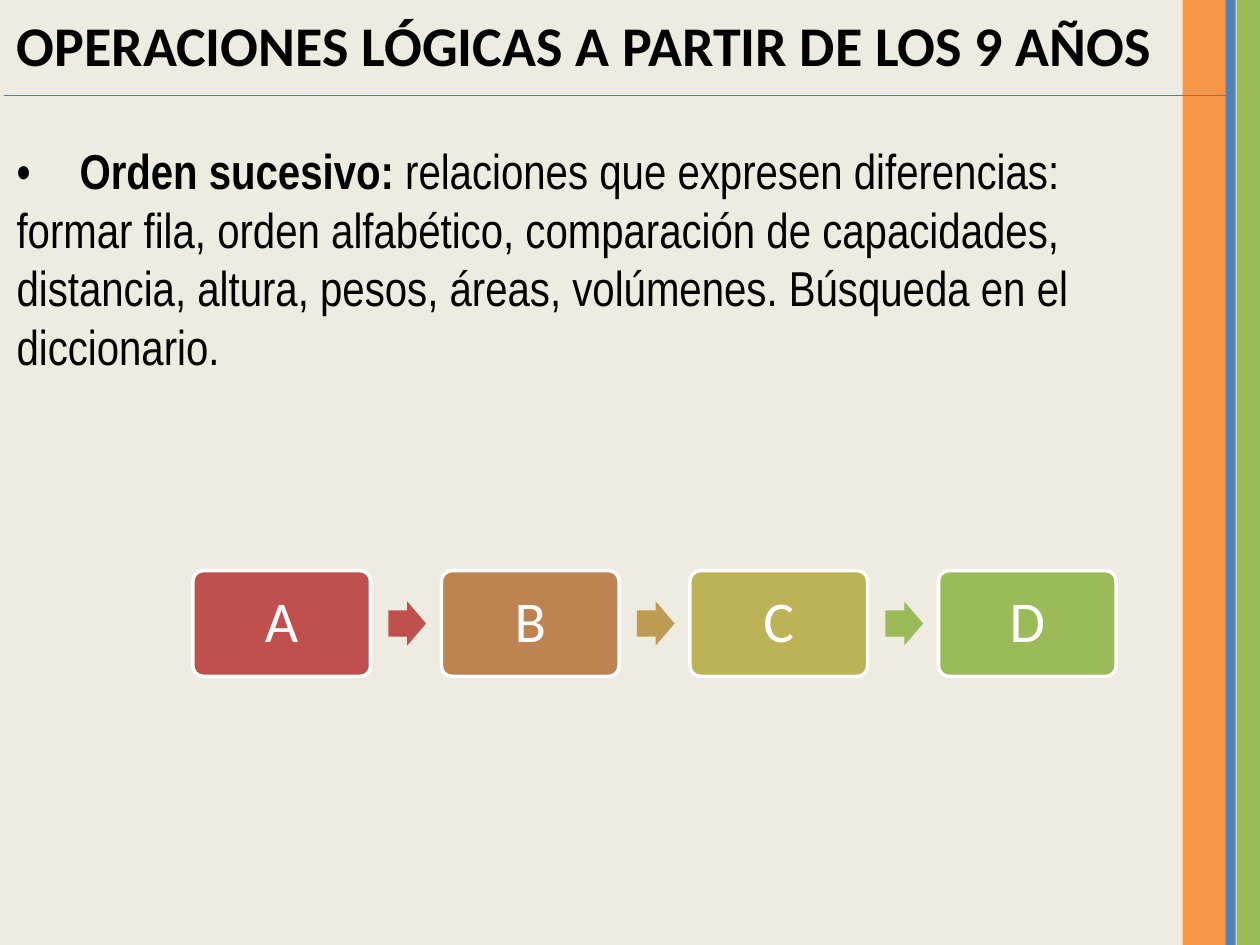
import pptx
import pptx.dml.color
import pptx.enum.shapes
import pptx.enum.text
import pptx.oxml
import pptx.oxml.ns
import pptx.util
from pptx.util import Cm, Pt

RGBColor = pptx.dml.color.RGBColor
Shape = pptx.enum.shapes.MSO_SHAPE
Anchor = pptx.enum.text.MSO_ANCHOR
Align = pptx.enum.text.PP_ALIGN

BEIGE = RGBColor(0xEE, 0xEC, 0xE1)
ORANGE = RGBColor(0xF7, 0x96, 0x46)
BLUE = RGBColor(0x4F, 0x81, 0xBD)
RULE_BLUE = RGBColor(0x4B, 0x7E, 0xBC)
GREEN = RGBColor(0x9B, 0xBB, 0x59)
RED = RGBColor(0xC0, 0x50, 0x4D)
BROWN = RGBColor(0xBE, 0x83, 0x51)
TAN = RGBColor(0xBD, 0x9B, 0x53)
OLIVE = RGBColor(0xBD, 0xB2, 0x55)
BLACK = RGBColor(0, 0, 0)
WHITE = RGBColor(0xFF, 0xFF, 0xFF)

# Content
TITLE = "OPERACIONES LÓGICAS A PARTIR DE LOS 9 AÑOS"
BODY = [  # text, bold
    ("•\t", False),
    ("Orden sucesivo: ", True),
    ("relaciones que expresen diferencias: formar fila, orden alfabético, "
     "comparación de capacidades, distancia, altura, pesos, áreas, volúmenes. "
     "Búsqueda en el diccionario.", False),
]
STEPS = [  # letter, card colour, colour of the arrow that follows
    ("A", RED, RED), ("B", BROWN, TAN), ("C", OLIVE, GREEN), ("D", GREEN, None),
]
BARS = [(23.84, 0.89, ORANGE), (24.93, 0.48, GREEN), (24.71, 0.2, BLUE)]  # left, width

# Layout in centimetres
WIDTH, HEIGHT = 25.4, 19.05
CARD_LEFT, CARD_WIDTH, CARD_HEIGHT, CARD_PITCH = 3.89, 3.58, 2.13, 5.01
ROW_MIDDLE = 12.57
ARROW_OFFSET, ARROW_WIDTH, ARROW_HEIGHT = 3.94, 0.76, 0.89


def add_filled(slide, kind, left, top, width, height, colour):
    shape = slide.shapes.add_shape(kind, Cm(left), Cm(top), Cm(width), Cm(height))
    shape.shadow.inherit = False
    shape.fill.solid()
    shape.fill.fore_color.rgb = colour
    shape.line.fill.background()
    return shape


def place_text(holder, left, top, width, height):
    holder.left, holder.top = Cm(left), Cm(top)
    holder.width, holder.height = Cm(width), Cm(height)
    frame = holder.text_frame
    frame.word_wrap = True
    frame.auto_size = pptx.enum.text.MSO_AUTO_SIZE.NONE
    frame.vertical_anchor = Anchor.TOP
    para = frame.paragraphs[0]
    para.alignment = Align.LEFT
    para.space_before = Pt(0)
    return para


def format_span(span, font, size, colour, bold=False):
    span.font.name, span.font.size, span.font.bold = font, Pt(size), bold
    span.font.color.rgb = colour


deck = pptx.Presentation()
deck.slide_width, deck.slide_height = Cm(WIDTH), Cm(HEIGHT)
page = deck.slides.add_slide(deck.slide_layouts[1])
page.background.fill.solid()
page.background.fill.fore_color.rgb = BEIGE

# Side bars
for left, width, colour in BARS:
    add_filled(page, Shape.RECTANGLE, left, 0, width, HEIGHT, colour)

# Title
para = place_text(page.shapes.title, 0.08, 0.08, 23.9, 1.65)
para.text = TITLE
format_span(para.runs[0], "Calibri", 32, BLACK, True)

# Body, with the bullet on the first line only and later lines at the margin
para = place_text(page.placeholders[1], 0.08, 2.7, 23.9, 6)
properties = para._p.get_or_add_pPr()
properties.set("marL", "0")
properties.set("indent", "0")
properties.append(pptx.oxml.parse_xml(
    "<a:buNone %s/>" % pptx.oxml.ns.nsdecls("a")))
for text, bold in BODY:
    span = para.add_run()
    span.text = text
    format_span(span, "Arial Narrow", 28, BLACK, bold)

# Rule under the title
rule = page.shapes.add_connector(
    pptx.enum.shapes.MSO_CONNECTOR.STRAIGHT, Cm(0.08), Cm(1.93), Cm(24.77), Cm(1.93))
rule.line.color.rgb = RULE_BLUE
rule.line.width = Pt(0.75)
rule._element.spPr.append(pptx.oxml.parse_xml(
    "<a:effectLst %s/>" % pptx.oxml.ns.nsdecls("a")))

# Sequence of cards and arrows
for index, (letter, card_colour, arrow_colour) in enumerate(STEPS):
    left = CARD_LEFT + index * CARD_PITCH
    card = add_filled(page, Shape.ROUNDED_RECTANGLE, left, ROW_MIDDLE - CARD_HEIGHT / 2,
                      CARD_WIDTH, CARD_HEIGHT, card_colour)
    card.adjustments[0] = 0.1
    card.line.color.rgb = WHITE
    card.line.width = Pt(2)
    frame = card.text_frame
    frame.word_wrap = True
    frame.vertical_anchor = Anchor.MIDDLE
    frame.margin_left = frame.margin_right = Cm(0.36)
    frame.margin_top = frame.margin_bottom = Cm(0.36)
    para = frame.paragraphs[0]
    para.text = letter
    para.alignment = Align.CENTER
    para.line_spacing = 0.9
    format_span(para.runs[0], "Calibri", 33, WHITE)
    if arrow_colour is not None:
        arrow = add_filled(page, Shape.RIGHT_ARROW, left + ARROW_OFFSET,
                           ROW_MIDDLE - ARROW_HEIGHT / 2,
                           ARROW_WIDTH, ARROW_HEIGHT, arrow_colour)
        arrow.adjustments[0], arrow.adjustments[1] = 0.6, 0.5

deck.save("out.pptx")
